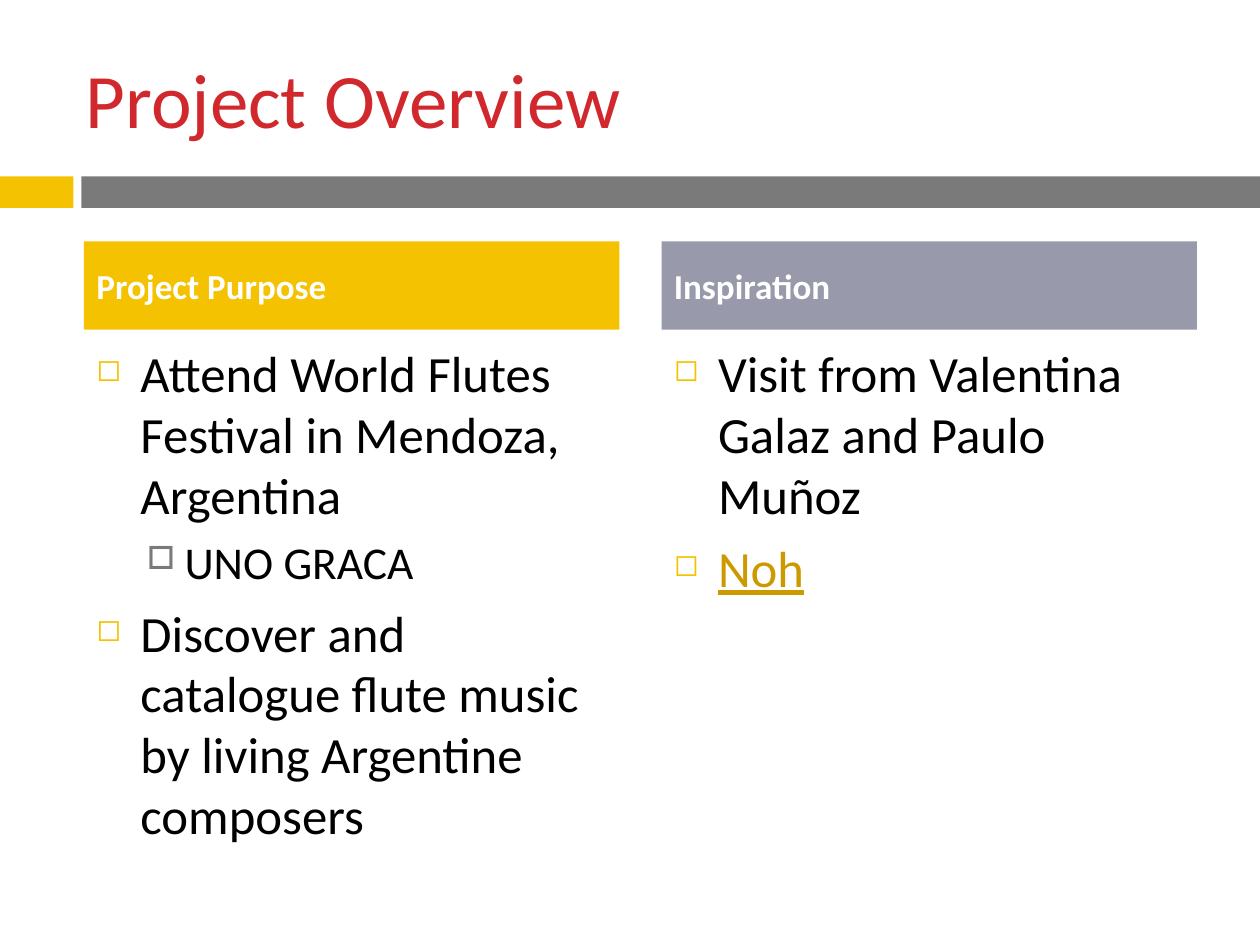
from dataclasses import dataclass

from lxml import etree
from pptx import Presentation
from pptx.dml.color import RGBColor
from pptx.enum import shapes, text
from pptx.oxml import ns
from pptx.util import Pt


@dataclass(frozen=True)
class Theme:
    font: str = "Calibri"
    red: str = "D1282E"
    yellow: str = "F5C201"
    gray: str = "7A7A7A"
    lavender: str = "989AAC"
    gold: str = "CC9900"
    black: str = "000000"
    white: str = "FFFFFF"
    title: int = 44
    heading: int = 20
    body: int = 29
    detail: int = 26


theme = Theme()


def add_block(left, top, width, height, fill):
    block = page.shapes.add_shape(
        shapes.MSO_SHAPE.RECTANGLE, Pt(left), Pt(top), Pt(width), Pt(height))
    block.shadow.inherit = False
    block.fill.solid()
    block.fill.fore_color.rgb = RGBColor.from_string(fill)
    block.line.fill.background()
    return block


def write(box, words, size, color=theme.black, bold=None, underline=None,
          before=0, level=0, indent=0, hang=0, bullet=None):
    """Add a paragraph; bullet is (character, colour, percent of text size)."""
    frame = box.text_frame
    frame.word_wrap = True
    para = frame.paragraphs[0]
    if para.runs:
        para = frame.add_paragraph()
    para.alignment = text.PP_ALIGN.LEFT
    para.space_before = Pt(before)
    para.level = level
    span = para.add_run()
    span.text = words
    span.font.name = theme.font
    span.font.size = Pt(size)
    span.font.color.rgb = RGBColor.from_string(color)
    span.font.bold = bold
    span.font.underline = underline
    if bullet:
        mark, mark_color, percent = bullet
        props = para._p.get_or_add_pPr()
        props.set("marL", str(Pt(indent)))
        props.set("indent", str(Pt(-hang)))
        tint = etree.SubElement(props, ns.qn("a:buClr"))
        etree.SubElement(tint, ns.qn("a:srgbClr"), val=mark_color)
        etree.SubElement(props, ns.qn("a:buSzPct"), val=str(percent * 1000))
        etree.SubElement(props, ns.qn("a:buChar"), char=mark)


deck = Presentation()
deck.slide_width, deck.slide_height = Pt(720), Pt(540)
page = deck.slides.add_slide(deck.slide_layouts[6])

add_block(0, 100.8, 42, 18, theme.yellow)
add_block(46.5, 100.8, 673.5, 18, theme.gray)

title = page.shapes.add_textbox(Pt(42), Pt(21.6), Pt(642), Pt(68.4))
title.text_frame.vertical_anchor = text.MSO_ANCHOR.MIDDLE
write(title, "Project Overview", theme.title, theme.red)

point = dict(size=theme.body, before=7, indent=25.2, hang=25.2,
             bullet=("◻", theme.yellow, 60))
detail = dict(size=theme.detail, before=5.5, level=1, indent=50.4, hang=21.6,
              bullet=("□", theme.gray, 70))
linked = point | dict(color=theme.gold, underline=True)

columns = [
    (48, theme.yellow, "Project Purpose", [
        ("Attend World Flutes Festival in Mendoza, Argentina", point),
        ("UNO GRACA", detail),
        ("Discover and catalogue flute music by living Argentine composers", point),
    ]),
    (378, theme.lavender, "Inspiration", [
        ("Visit from Valentina Galaz and Paulo Muñoz", point),
        ("Noh", linked),
    ]),
]
for left, fill, heading, items in columns:
    body = page.shapes.add_textbox(Pt(left), Pt(192), Pt(306), Pt(282))
    for words, style in items:
        write(body, words, **style)
    header = add_block(left, 138, 306, 50.4, fill)
    header.text_frame.vertical_anchor = text.MSO_ANCHOR.MIDDLE
    write(header, heading, theme.heading, theme.white, bold=True, before=7)

deck.save("out.pptx")
